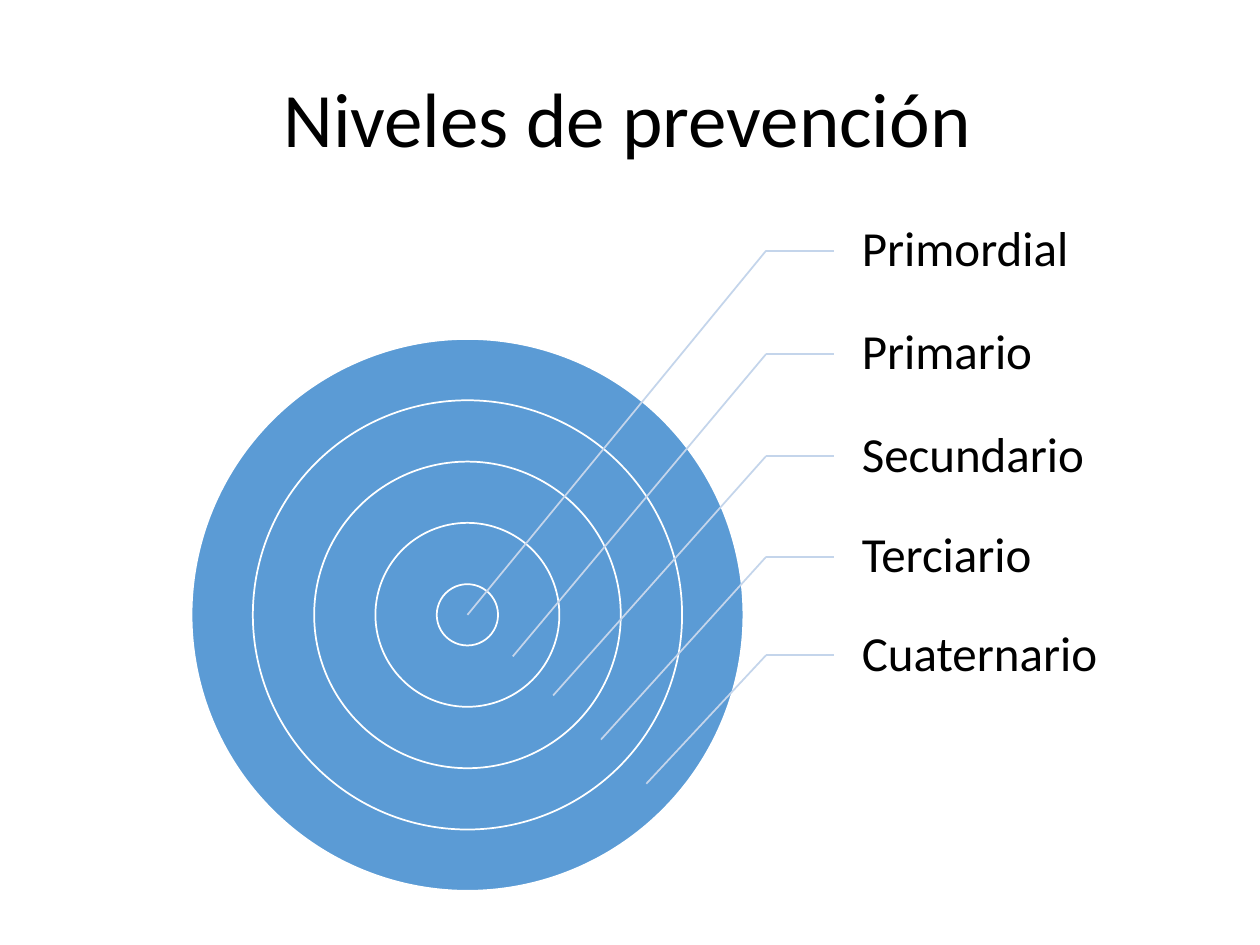
from lxml.etree import SubElement
from pptx import Presentation
from pptx.dml.color import RGBColor
from pptx.enum.shapes import MSO_CONNECTOR, MSO_SHAPE
from pptx.enum.text import MSO_ANCHOR, PP_ALIGN
from pptx.oxml.ns import qn
from pptx.util import Inches, Pt

BLACK = RGBColor(0x00, 0x00, 0x00)
WHITE = RGBColor(0xFF, 0xFF, 0xFF)
RING_BLUE = RGBColor(0x5B, 0x9B, 0xD5)
LEADER_BLUE = RGBColor(0xC4, 0xD5, 0xEB)

FONT = "Calibri"
SLIDE_WIDTH, SLIDE_HEIGHT = 10, 7.5
CENTER_X, CENTER_Y = 3.71, 4.88
CORE_DIAMETER = 4.38 / 9
LABEL_LEFT, LABEL_WIDTH, LABEL_HEIGHT = 6.62, 2.19, 0.77
ELBOW_X = 6.08

LEVELS = [
    ("Primordial", 1.99, (CENTER_X, CENTER_Y)),
    ("Primario", 2.81, (4.07, 5.21)),
    ("Secundario", 3.62, (4.39, 5.52)),
    ("Terciario", 4.42, (4.77, 5.87)),
    ("Cuaternario", 5.2, (5.13, 6.22)),
]


def add_text(slide, text, left, top, width, height, size, align, left_inset):
    """Add a vertically centred text box and return it."""
    box = slide.shapes.add_textbox(Inches(left), Inches(top), Inches(width), Inches(height))
    frame = box.text_frame
    frame.word_wrap = True
    frame.vertical_anchor = MSO_ANCHOR.MIDDLE
    frame.margin_left = Inches(left_inset)
    frame.margin_right = frame.margin_top = frame.margin_bottom = Inches(0.04)
    frame.text = text
    paragraph = frame.paragraphs[0]
    paragraph.alignment = align
    paragraph.line_spacing = 0.9
    font = paragraph.runs[0].font
    font.name = FONT
    font.size = Pt(size)
    font.color.rgb = BLACK
    return box


def add_ring(slide, diameter):
    """Add one disc of the target around the common centre."""
    ring = slide.shapes.add_shape(
        MSO_SHAPE.OVAL,
        Inches(CENTER_X - diameter / 2), Inches(CENTER_Y - diameter / 2),
        Inches(diameter), Inches(diameter),
    )
    ring.shadow.inherit = False
    ring.fill.solid()
    ring.fill.fore_color.rgb = RING_BLUE
    ring.line.color.rgb = WHITE
    ring.line.width = Pt(1)


def add_leader(slide, start, end):
    """Add a thin straight leader line and return it."""
    leader = slide.shapes.add_connector(
        MSO_CONNECTOR.STRAIGHT, *(Inches(value) for value in (*start, *end))
    )
    leader.line.color.rgb = LEADER_BLUE
    leader.line.width = Pt(1)
    SubElement(leader._element.spPr, qn("a:effectLst"))
    return leader


def add_level(slide, name, middle, target):
    """Add a level's label with its two-part leader to the ring."""
    label = add_text(slide, name, LABEL_LEFT, middle - LABEL_HEIGHT / 2,
                     LABEL_WIDTH, LABEL_HEIGHT, 28, PP_ALIGN.LEFT, 0.22)
    elbow = (ELBOW_X, middle)
    add_leader(slide, elbow, (LABEL_LEFT, middle)).end_connect(label, 1)
    add_leader(slide, elbow, target)


def main():
    """Build the slide on levels of prevention."""
    presentation = Presentation()
    presentation.slide_width = Inches(SLIDE_WIDTH)
    presentation.slide_height = Inches(SLIDE_HEIGHT)
    slide = presentation.slides.add_slide(presentation.slide_layouts[6])
    add_text(slide, "Niveles de prevención", 0.67, 0.25, 8.62, 1.45, 44, PP_ALIGN.CENTER, 0.04)
    for multiple in range(9, 0, -2):
        add_ring(slide, multiple * CORE_DIAMETER)
    for name, middle, target in LEVELS:
        add_level(slide, name, middle, target)
    presentation.save("out.pptx")


if __name__ == "__main__":
    main()
